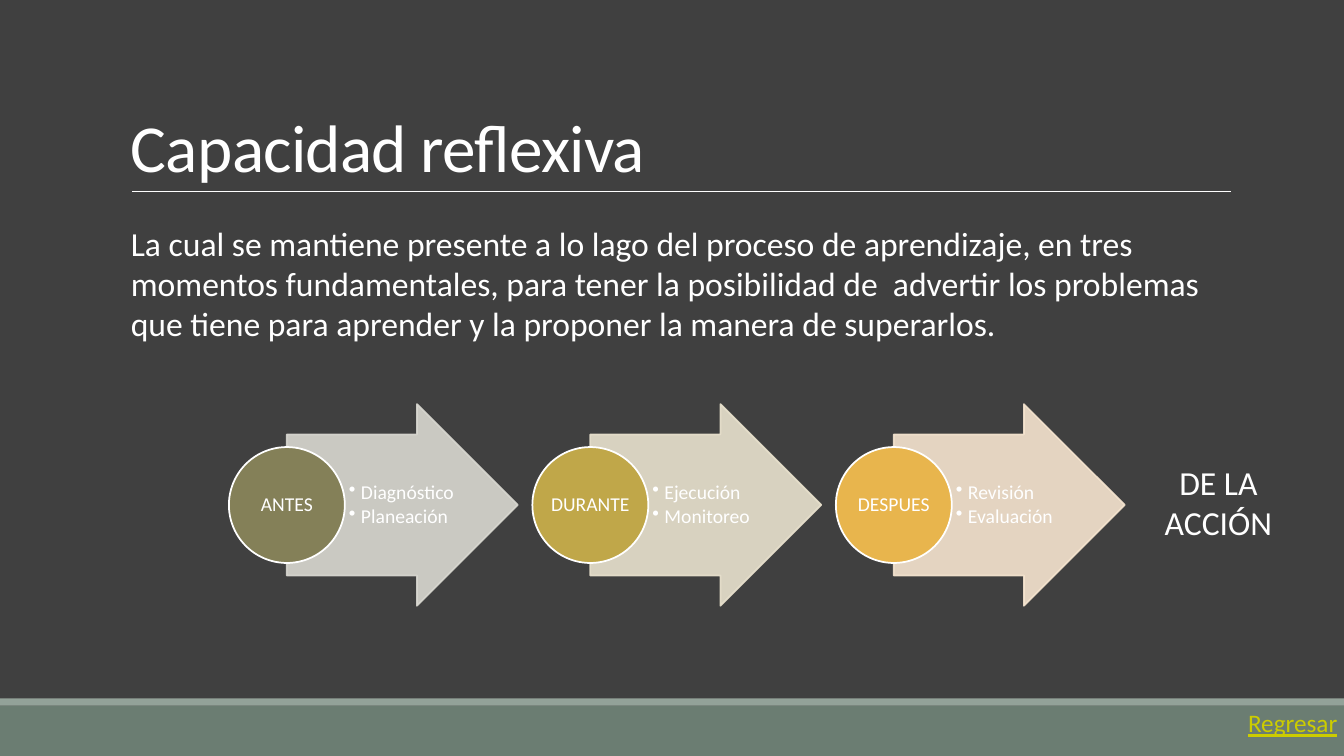
from pptx import Presentation
from pptx.dml.color import RGBColor
from pptx.enum.shapes import MSO_CONNECTOR as Conn, MSO_SHAPE as Kind
from pptx.enum.text import MSO_ANCHOR as Anchor, PP_ALIGN as Align
from pptx.oxml.ns import qn
from pptx.util import Inches, Pt
from lxml.etree import SubElement

WHITE = "FFFFFF"
TITLE = "Capacidad reflexiva"
INTRO = ("La cual se mantiene presente a lo lago del proceso de aprendizaje, "
         "en tres momentos fundamentales, para tener la posibilidad de  advertir "
         "los problemas que tiene para aprender y la proponer la manera de superarlos.")
STAGES = [
    ("ANTES", "848058", "D9D8D1", ["Diagnóstico", "Planeación"]),
    ("DURANTE", "C0A749", "E9E2CE", ["Ejecución", "Monitoreo"]),
    ("DESPUES", "E8B54D", "F6E5D0", ["Revisión", "Evaluación"]),
]
BANDS = [(7, 0.5, "6B7D72"), (6.93, 0.07, "93A299")]
LEFT, STEP = 2.27, 3.01
MIDDLE = 5.01
DISC, ARROW, HEIGHT = 1.15, 2.29, 2
LABEL, LIST_W, LIST_H = 0.81, 1.12, 1.4


def paint(target, color):
    target.solid()
    target.fore_color.rgb = RGBColor.from_string(color)


def add_form(kind, box, color, edge=None):
    form = slide.shapes.add_shape(kind, *map(Inches, box))
    form.shadow.inherit = False
    paint(form.fill, color)
    if edge:
        paint(form.line.fill, edge)
        form.line.width = Pt(1.25)
    else:
        form.line.fill.background()
    return form


def add_text(box, lines, size, color=WHITE, align=Align.LEFT, anchor=Anchor.TOP,
             inset=(0.1, 0.05, 0.1, 0.05), wrap=True, ratio=1.0, after=0):
    frame = slide.shapes.add_textbox(*map(Inches, box)).text_frame
    frame.word_wrap = wrap
    frame.vertical_anchor = anchor
    (frame.margin_left, frame.margin_top,
     frame.margin_right, frame.margin_bottom) = map(Inches, inset)
    frame.text = "\n".join(lines)
    for para in frame.paragraphs:
        para.alignment = align
        para.line_spacing = ratio
        para.space_after = Pt(after)
        para.font.name = "Calibri"
        para.font.size = Pt(size)
        paint(para.font.fill, color)
    return frame.paragraphs


def add_bullet(para):
    props = para._p.get_or_add_pPr()
    props.set("marL", str(Inches(0.12)))
    props.set("indent", str(-Inches(0.12)))
    SubElement(props, qn("a:buChar")).set("char", "•")


def add_stage(left, name, dark, light, items):
    start = left + DISC / 2
    arrow = add_form(Kind.RIGHT_ARROW, (start, MIDDLE - HEIGHT / 2, ARROW, HEIGHT),
                     light, light)
    arrow.adjustments[0], arrow.adjustments[1] = 0.7, 0.5
    for tone in arrow._element.spPr.iter(qn("a:srgbClr")):
        SubElement(tone, qn("a:alpha")).set("val", "90000")
    paras = add_text((left + DISC, MIDDLE - LIST_H / 2, LIST_W, LIST_H), items, 14,
                     anchor=Anchor.MIDDLE, inset=(0.04, 0.01, 0.02, 0.01),
                     ratio=0.9, after=2)
    for para in paras:
        add_bullet(para)
    add_form(Kind.OVAL, (left, MIDDLE - DISC / 2, DISC, DISC), dark, WHITE)
    add_text((start - LABEL / 2, MIDDLE - LABEL / 2, LABEL, LABEL), [name], 14,
             align=Align.CENTER, anchor=Anchor.MIDDLE, inset=[0.01] * 4, ratio=0.9)


deck = Presentation()
deck.slide_width, deck.slide_height = Inches(13.33), Inches(7.5)
slide = deck.slides.add_slide(deck.slide_layouts[6])
paint(slide.background.fill, "404040")

for top, height, color in BANDS:
    add_form(Kind.RECTANGLE, (0, top, 13.33, height), color)

rule = slide.shapes.add_connector(Conn.STRAIGHT, *map(Inches, (1.31, 1.9, 12.21, 1.9)))
paint(rule.line.fill, WHITE)
rule.line.width = Pt(0.5)
SubElement(rule._element.spPr, qn("a:effectLst"))

title = add_text((1.2, 0.31, 11, 1.59), [TITLE], 48, anchor=Anchor.BOTTOM, ratio=0.85)
title[0].runs[0]._r.get_or_add_rPr().set("spc", "-50")

for index, stage in enumerate(STAGES):
    add_stage(LEFT + index * STEP, *stage)

add_text((1.2, 2.16, 11, 1.31), [INTRO], 24)
add_text((11.35, 4.53, 1.47, 0.91), ["DE LA ACCIÓN"], 24, align=Align.CENTER)
back = add_text((12.28, 6.97, 1.1, 0.4), ["Regresar"], 18, "CCCC00", wrap=False)
back[0].font.underline = True

deck.save("out.pptx")
